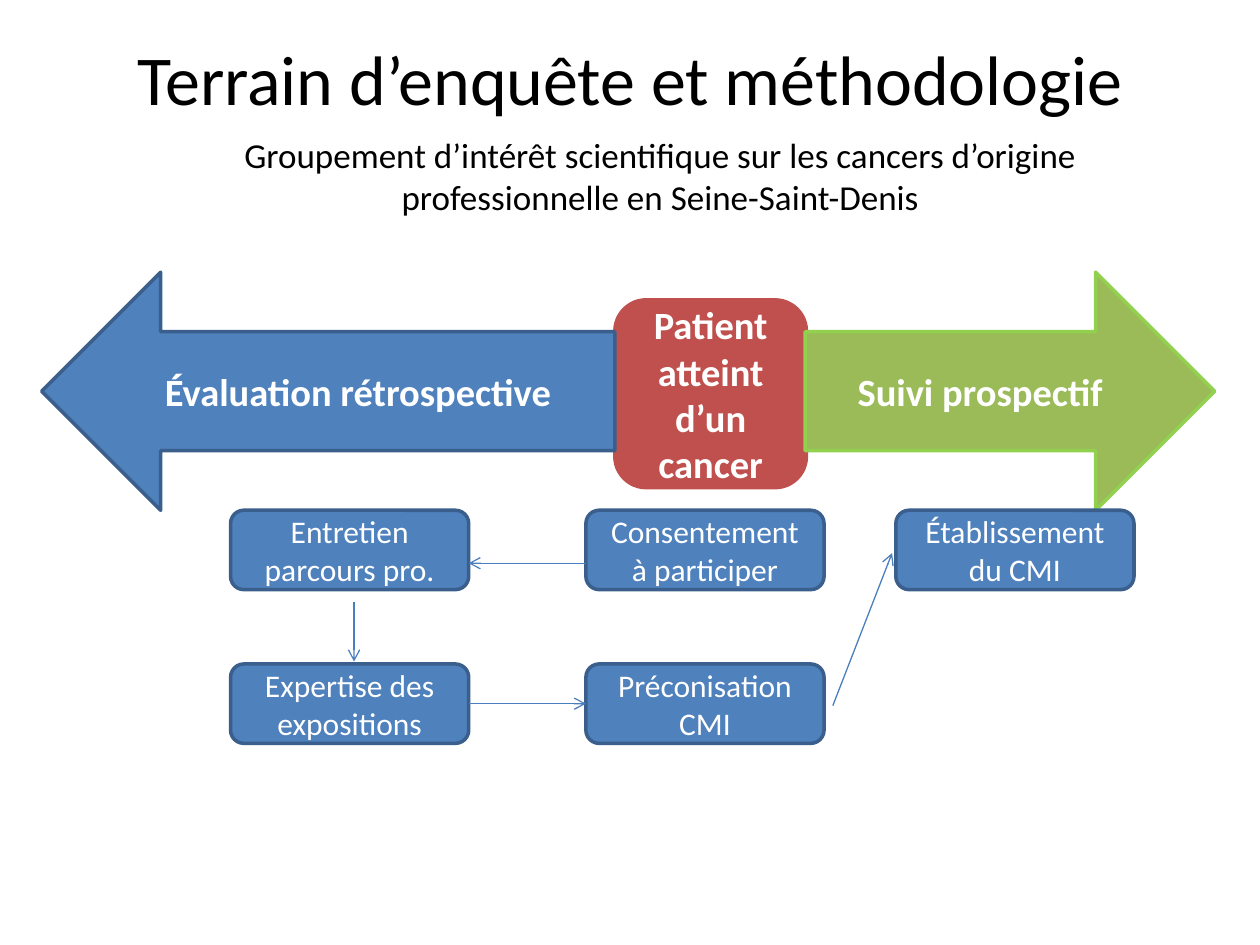
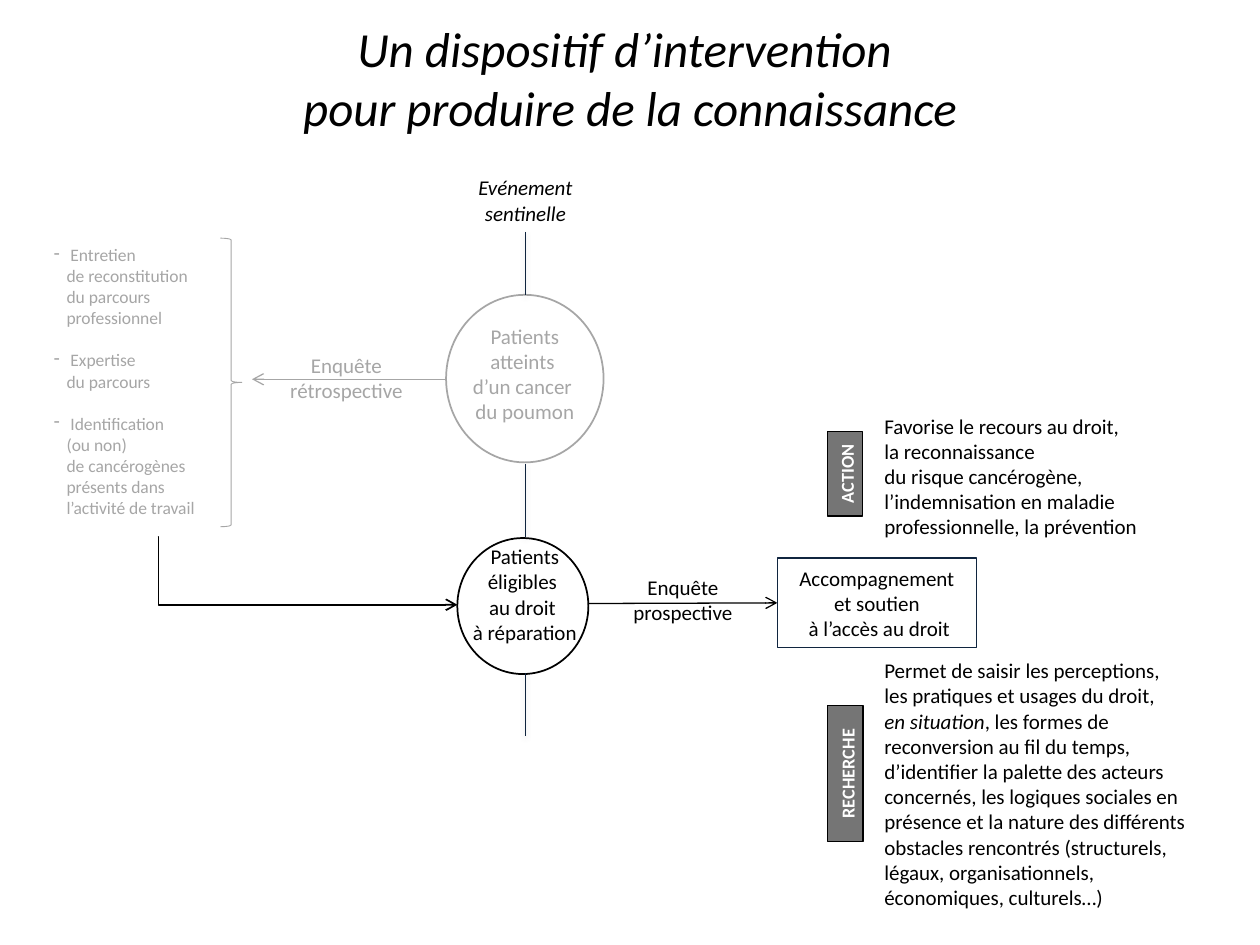
import pptx
import pptx.dml.color
import pptx.enum.shapes
import pptx.enum.text
import pptx.oxml
import pptx.oxml.ns
import pptx.util
from lxml import etree

Inches = pptx.util.Inches
Pt = pptx.util.Pt
qn = pptx.oxml.ns.qn
SHAPE = pptx.enum.shapes.MSO_SHAPE
LINE = pptx.enum.shapes.MSO_CONNECTOR
ALIGN = pptx.enum.text.PP_ALIGN
ANCHOR = pptx.enum.text.MSO_ANCHOR

# Shared style
FONT = "Calibri"
BLACK, WHITE, GREY = "000000", "FFFFFF", "A6A6A6"
BLUE, DARK_BLUE, ARROW_BLUE = "4F81BD", "3A5F8C", "4B7EBC"
RED, GREEN, LIME = "C0504D", "9BBB59", "92D050"
NAVY, AXIS_NAVY = "10253F", "0F243E"
TITLE_BOX = (0.5, 0.3, 9, 0.63)


def color(value):
    return pptx.dml.color.RGBColor.from_string(value)


def style_paragraph(p, size, hue, align=ALIGN.CENTER, bold=False, italic=False):
    p.alignment = align
    p.font.name = FONT
    p.font.size = Pt(size)
    p.font.color.rgb = color(hue)
    p.font.bold = bold
    p.font.italic = italic


def add_title_slide(prs, text, size, italic=False):
    slide = prs.slides.add_slide(prs.slide_layouts[5])
    sp = slide.shapes.title
    sp.left, sp.top, sp.width, sp.height = map(Inches, TITLE_BOX)
    tf = sp.text_frame
    tf.auto_size = pptx.enum.text.MSO_AUTO_SIZE.NONE
    tf.vertical_anchor = ANCHOR.MIDDLE
    p = tf.paragraphs[0]
    p.text = text
    style_paragraph(p, size, BLACK, italic=italic)
    return slide


def add_text(slide, box, text, size=12, hue=BLACK, anchor=ANCHOR.TOP, **style):
    sp = slide.shapes.add_textbox(*map(Inches, box))
    tf = sp.text_frame
    tf.word_wrap = True
    tf.vertical_anchor = anchor
    p = tf.paragraphs[0]
    p.text = text
    style_paragraph(p, size, hue, **style)
    return tf


def add_shape(slide, kind, box, fill, line, width, text="", size=12, hue=WHITE, bold=False):
    sp = slide.shapes.add_shape(kind, *map(Inches, box))
    sp.shadow.inherit = False
    if fill:
        sp.fill.solid()
        sp.fill.fore_color.rgb = color(fill)
    else:
        sp.fill.background()
    sp.line.color.rgb = color(line)
    sp.line.width = Pt(width)
    if text:
        tf = sp.text_frame
        tf.word_wrap = True
        tf.vertical_anchor = ANCHOR.MIDDLE
        p = tf.paragraphs[0]
        p.text = text
        style_paragraph(p, size, hue, bold=bold)
    return sp


def add_line(slide, start, end, hue, width=0.75, arrow=True, kind=LINE.STRAIGHT):
    cx = slide.shapes.add_connector(kind, *map(Inches, start + end))
    cx.line.color.rgb = color(hue)
    cx.line.width = Pt(width)
    if arrow:
        etree.SubElement(cx.line._get_or_add_ln(), qn("a:tailEnd"), type="arrow")
    etree.SubElement(cx._element.spPr, qn("a:effectLst"))
    return cx


def add_axis_segment(slide, top, bottom):
    """Thin vertical line with a soft shadow below it."""
    cx = add_line(slide, (4.17, top), (4.17, bottom), AXIS_NAVY, 0.25, arrow=False)
    effects = cx._element.spPr.find(qn("a:effectLst"))
    shadow = etree.SubElement(effects, qn("a:outerShdw"), blurRad=str(Pt(3.1)),
                              dist=str(Pt(1.6)), dir="5400000", rotWithShape="0")
    black = etree.SubElement(shadow, qn("a:srgbClr"), val=BLACK)
    etree.SubElement(black, qn("a:alpha"), val="38000")


def add_dash_list(slide, box, items):
    tf = add_text(slide, box, items[0], 10, GREY, align=ALIGN.LEFT)
    for item in items[1:]:
        p = tf.add_paragraph()
        p.text = item
        style_paragraph(p, 10, GREY, ALIGN.LEFT)
    for p in tf.paragraphs:
        p.space_after = Pt(12)
        pPr = p._p.get_or_add_pPr()
        pPr.set("marL", str(Inches(0.1)))
        pPr.set("indent", str(Inches(-0.1)))
        bullet = etree.Element(qn("a:buChar"), char="-")
        pPr.find(qn("a:defRPr")).addprevious(bullet)


def add_side_label(slide, box, text):
    """Translucent tag in small capitals, read from bottom to top."""
    sp = add_shape(slide, SHAPE.RECTANGLE, box, BLACK, BLACK, 0.75, text, 13, bold=True)
    sp.rotation = 270
    fill = sp._element.spPr.find(qn("a:solidFill"))
    etree.SubElement(fill[0], qn("a:alpha"), val="54000")
    r = sp.text_frame.paragraphs[0].runs[0]
    r._r.get_or_add_rPr().set("cap", "small")


def build_method_slide(prs):
    slide = add_title_slide(prs, "Terrain d’enquête et méthodologie", 40)
    add_text(slide, (0.98, 1.01, 8.52, 0.77),
             "Groupement d’intérêt scientifique sur les cancers d’origine "
             "professionnelle en Seine-Saint-Denis", 20)

    # Patient between the two directions of study
    for kind, box, fill, line, text in (
        (SHAPE.ROUNDED_RECTANGLE, (4.88, 2.38, 1.52, 1.49), RED, RED,
         "Patient atteint d’un cancer"),
        (SHAPE.LEFT_ARROW, (0.33, 2.16, 4.55, 1.89), BLUE, DARK_BLUE,
         "Évaluation rétrospective"),
        (SHAPE.RIGHT_ARROW, (6.39, 2.16, 3.25, 1.89), GREEN, LIME,
         "Suivi prospectif"),
    ):
        add_shape(slide, kind, box, fill, line, 2, text, 22, bold=True)

    # Steps
    left, middle, right = 1.83, 4.65, 7.11
    upper, lower = 4.05, 5.27

    def add_step(x, y, text):
        return add_shape(slide, SHAPE.ROUNDED_RECTANGLE, (x, y, 1.89, 0.63),
                         BLUE, DARK_BLUE, 2, text, 18)

    add_step(middle, upper, "Consentement à participer")
    add_step(left, upper, "Entretien parcours pro.")
    expertise = add_step(left, lower, "Expertise des expositions")
    advice = add_step(middle, lower, "Préconisation CMI")
    add_step(right, upper, "Établissement du CMI")

    # Arrows from step to step
    add_line(slide, (4.65, 4.47), (3.72, 4.47), ARROW_BLUE)
    add_line(slide, (2.81, 4.78), (2.81, 5.25), ARROW_BLUE)
    cx = add_line(slide, (3.72, 5.58), (4.65, 5.58), ARROW_BLUE)
    cx.begin_connect(expertise, 3)
    cx.end_connect(advice, 1)
    add_line(slide, (6.61, 5.6), (7.08, 4.39), ARROW_BLUE)


def build_device_slide(prs):
    slide = add_title_slide(
        prs, "Un dispositif d’intervention \npour produire de la connaissance", 28, italic=True)

    # Vertical axis with the two groups of patients
    add_text(slide, (3.42, 1.34, 1.5, 0.5), "Evénement sentinelle", italic=True)
    for circle, text_top, hue, text in (
        ((3.54, 2.34, 1.25, 1.33), 2.51, GREY, "Patients atteints \nd’un cancer \ndu poumon"),
        ((3.63, 4.27, 1.04, 1.08), 4.26, BLACK, "Patients éligibles \nau droit \nà réparation"),
    ):
        add_shape(slide, SHAPE.OVAL, circle, WHITE, hue, 1)
        add_text(slide, (3.54, text_top, 1.25, 0.91), text, hue=hue, anchor=ANCHOR.MIDDLE)
    for top, bottom in ((1.84, 2.34), (3.68, 4.26), (5.34, 5.84)):
        add_axis_segment(slide, top, bottom)

    # Retrospective survey
    add_line(slide, (3.54, 3.01), (2, 3.01), GREY)
    add_text(slide, (2, 2.75, 1.5, 0.5), "Enquête rétrospective", hue=GREY)
    add_dash_list(slide, (0.33, 1.89, 1.5, 2.29), (
        " Entretien \nde reconstitution \ndu parcours professionnel",
        " Expertise \ndu parcours",
        " Identification \n(ou non) \nde cancérogènes présents dans l’activité de travail",
    ))
    add_shape(slide, SHAPE.RIGHT_BRACE, (1.75, 1.89, 0.17, 2.29), WHITE, GREY, 0.5)

    # Return to the eligible patients, bending at the start
    cx = add_line(slide, (1.25, 4.26), (3.63, 4.8), BLACK, 1, kind=LINE.ELBOW)
    guides = cx._element.spPr.find(qn("a:prstGeom")).find(qn("a:avLst"))
    etree.SubElement(guides, qn("a:gd"), name="adj1", fmla="val 300")

    # Prospective survey
    support = add_shape(slide, SHAPE.RECTANGLE, (6.17, 4.43, 1.58, 0.71), None, NAVY, 1,
                        "Accompagnement et soutien\n à l’accès au droit", hue=BLACK)
    cx = add_line(slide, (4.67, 4.79), (6.17, 4.79), BLACK)
    cx.end_connect(support, 1)
    add_text(slide, (4.67, 4.51, 1.5, 0.5), "Enquête prospective")

    # Action and research
    add_text(slide, (6.92, 3.23, 2.75, 1.11),
             "Favorise le recours au droit, \nla reconnaissance \ndu risque cancérogène, "
             "l’indemnisation en maladie professionnelle, la prévention", align=ALIGN.LEFT)
    tf = add_text(slide, (6.92, 5.17, 2.75, 2.12),
                  "Permet de saisir les perceptions, \nles pratiques et usages du droit,\n",
                  align=ALIGN.LEFT)
    p = tf.paragraphs[0]
    r = p.add_run()
    r.text = "en situation"
    r.font.italic = True
    r = p.add_run()
    r.text = (", les formes de reconversion au fil du temps, d’identifier la palette des "
              "acteurs concernés, les logiques sociales en présence et la nature des "
              "différents obstacles rencontrés (structurels, légaux, organisationnels, "
              "économiques, culturels…)")
    add_side_label(slide, (6.37, 3.62, 0.67, 0.28), "action")
    add_side_label(slide, (6.17, 6, 1.08, 0.28), "recherche")


def main():
    prs = pptx.Presentation()
    prs.slide_width, prs.slide_height = Inches(10), Inches(7.5)
    build_method_slide(prs)
    build_device_slide(prs)
    prs.save("out.pptx")


if __name__ == "__main__":
    main()
